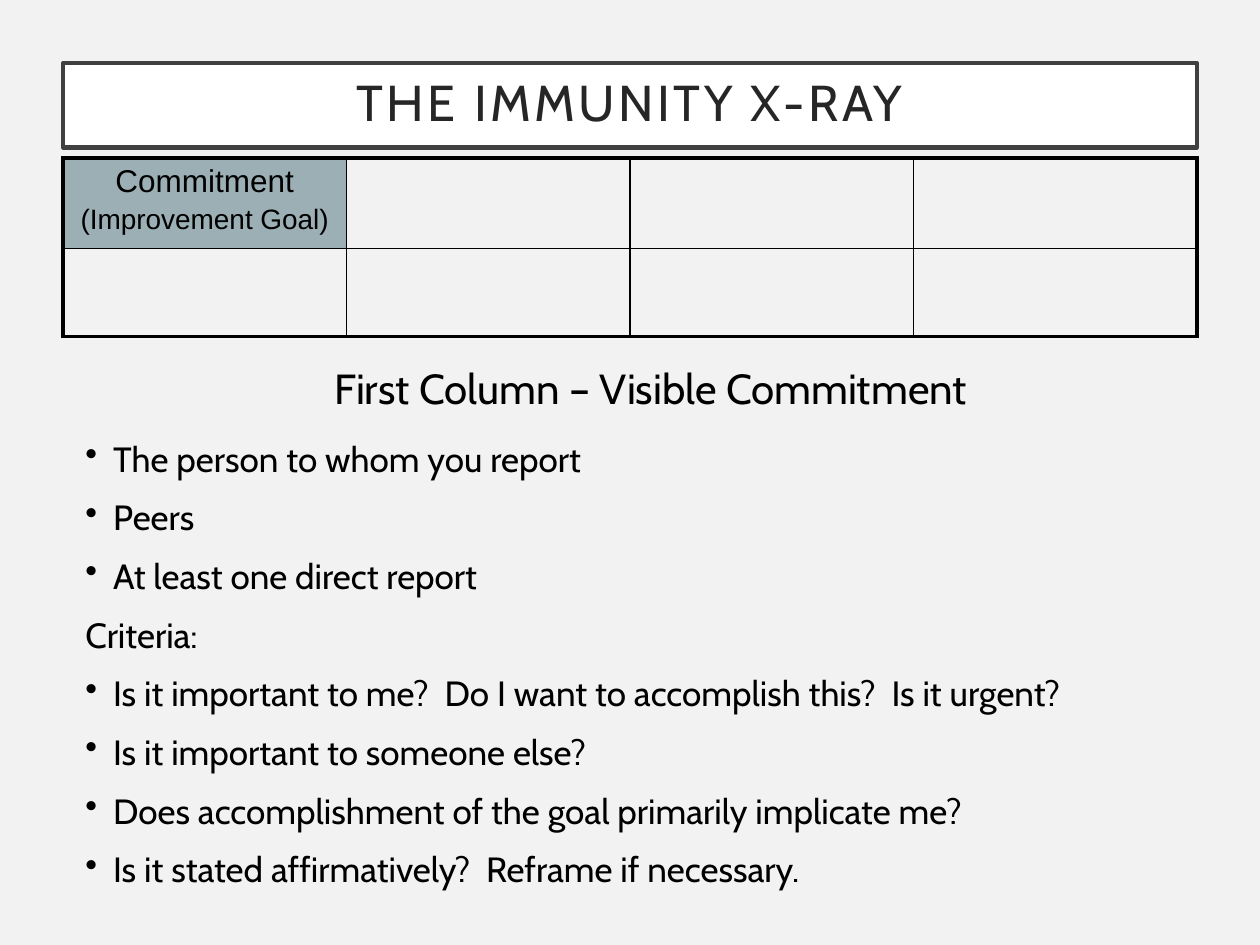
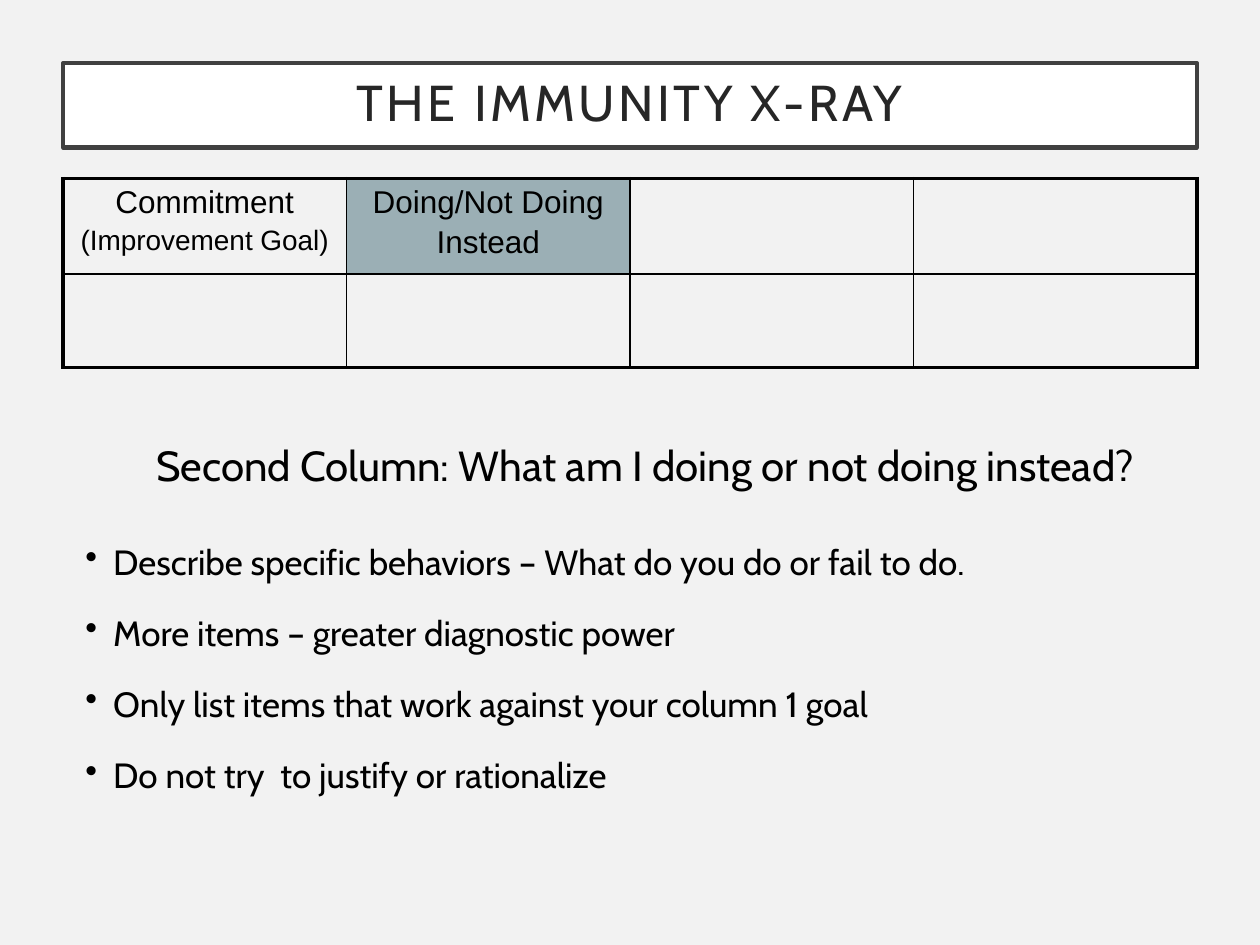
import dataclasses

import pptx
import pptx.dml.color
import pptx.enum.text
import pptx.oxml
import pptx.oxml.ns
import pptx.util


@dataclasses.dataclass(frozen=True)
class Theme:
    background: str = "F2F2F2"
    title_fill: str = "FFFFFF"
    title_line: str = "404040"
    title_text: str = "262626"
    text: str = "000000"
    highlight: str = "9BAFB5"
    font: str = "Cabin"
    table_font: str = "Arial"
    title_size: float = 28.8
    heading_size: float = 24
    body_size: float = 20
    label_size: float = 18
    sublabel_size: float = 16
    outer_border: float = 2.25
    inner_border: float = 1


theme = Theme()
rgb = pptx.dml.color.RGBColor.from_string
center = pptx.enum.text.PP_ALIGN.CENTER
namespace = pptx.oxml.ns.nsdecls("a")

presentation = pptx.Presentation()
presentation.slide_width = pptx.util.Inches(10)
presentation.slide_height = pptx.util.Inches(7.5)
width, height = presentation.slide_width, presentation.slide_height
margin = int(width * 0.05)
content_width = width - 2 * margin
bullet_indent = int(width * 0.022)


def format_text(paragraph, size, color, font):
    for run in paragraph.runs:
        run.font.size = pptx.util.Pt(size)
        run.font.name = font
        run.font.color.rgb = rgb(color)


def set_border(cell, side, points):
    cell._tc.get_or_add_tcPr().append(pptx.oxml.parse_xml(
        f'<a:{side} {namespace} w="{pptx.util.Pt(points)}"><a:solidFill>'
        f'<a:srgbClr val="{theme.text}"/></a:solidFill></a:{side}>'))


commitment = [("Commitment", theme.label_size), ("(Improvement Goal)", theme.sublabel_size)]
doing = [("Doing/Not Doing", theme.label_size), ("Instead", theme.label_size)]

# Vertical places are shares of the slide height; gaps are points. A "• " marks a bullet.
column_slides = [
    dict(
        labels=[commitment], table_top=0.167, row_heights=(0.096, 0.093),
        body_top=0.377, body_height=0.573, body_width=0.917,
        heading="First Column – Visible Commitment", heading_gap=14, item_gap=9.5,
        items=[
            "• The person to whom you report",
            "• Peers",
            "• At least one direct report",
            "Criteria:",
            "• Is it important to me?  Do I want to accomplish this?  Is it urgent?",
            "• Is it important to someone else?",
            "• Does accomplishment of the goal primarily implicate me?",
            "• Is it stated affirmatively?  Reframe if necessary.",
        ],
    ),
    dict(
        labels=[commitment, doing], table_top=0.189, row_heights=(0.101, 0.099),
        body_top=0.459, body_height=0.463, body_width=0.908,
        heading="Second Column: What am I doing or not doing instead?",
        heading_gap=28.5, item_gap=16.7,
        items=[
            "• Describe specific behaviors – What do you do or fail to do.",
            "• More items – greater diagnostic power",
            "• Only list items that work against your column 1 goal",
            "• Do not try  to justify or rationalize",
        ],
    ),
]

for content in column_slides:
    slide = presentation.slides.add_slide(presentation.slide_layouts[5])
    slide.background.fill.solid()
    slide.background.fill.fore_color.rgb = rgb(theme.background)

    # Title band
    title = slide.shapes.title
    title.left, title.top = margin, int(height * 0.067)
    title.width, title.height = content_width, int(height * 0.089)
    title.fill.solid()
    title.fill.fore_color.rgb = rgb(theme.title_fill)
    title.line.color.rgb = rgb(theme.title_line)
    title.line.width = pptx.util.Pt(2.5)
    frame = title.text_frame
    frame.text = "THE IMMUNITY X-RAY"
    frame.auto_size = pptx.enum.text.MSO_AUTO_SIZE.NONE
    frame.vertical_anchor = pptx.enum.text.MSO_ANCHOR.MIDDLE
    frame.margin_left = frame.margin_right = pptx.util.Inches(0.2)
    frame.margin_top = frame.margin_bottom = pptx.util.Inches(0.2)
    paragraph = frame.paragraphs[0]
    paragraph.alignment = center
    paragraph.line_spacing = 0.9
    format_text(paragraph, theme.title_size, theme.title_text, theme.font)
    paragraph.runs[0].font._element.set("spc", "200")

    # X-ray table, with the newest column highlighted
    row_heights = [int(height * share) for share in content["row_heights"]]
    table = slide.shapes.add_table(
        2, 4, margin, int(height * content["table_top"]), content_width, sum(row_heights)).table
    table.first_row = table.horz_banding = False
    for row, row_height in zip(table.rows, row_heights):
        row.height = row_height
    labels = content["labels"]
    for row in range(2):
        for column in range(4):
            cell = table.cell(row, column)
            outer_sides = {"lnL": column == 0, "lnR": column == 3, "lnT": row == 0, "lnB": row == 1}
            for side, is_outer in outer_sides.items():
                set_border(cell, side, theme.outer_border if is_outer else theme.inner_border)
            cell.fill.background()
            if row == 0 and column < len(labels):
                if column == len(labels) - 1:
                    cell.fill.solid()
                    cell.fill.fore_color.rgb = rgb(theme.highlight)
                cell.text_frame.text = "\n".join(text for text, size in labels[column])
                for paragraph, (text, size) in zip(cell.text_frame.paragraphs, labels[column]):
                    paragraph.alignment = center
                    format_text(paragraph, size, theme.text, theme.table_font)
                cell.text_frame.paragraphs[1].space_before = pptx.util.Pt(3)

    # Heading and its points
    body = slide.shapes.add_textbox(
        int(width * 0.058), int(height * content["body_top"]),
        int(width * content["body_width"]), int(height * content["body_height"]))
    frame = body.text_frame
    frame.word_wrap = True
    paragraph = frame.paragraphs[0]
    paragraph.text = content["heading"]
    paragraph.alignment = center
    format_text(paragraph, theme.heading_size, theme.text, theme.font)
    for index, item in enumerate(content["items"]):
        paragraph = frame.add_paragraph()
        paragraph.text = item.removeprefix("• ")
        gap = content["item_gap"] if index else content["heading_gap"]
        paragraph.space_before = pptx.util.Pt(gap)
        format_text(paragraph, theme.body_size, theme.text, theme.font)
        if item.startswith("• "):
            properties = paragraph._p.get_or_add_pPr()
            properties.set("marL", str(bullet_indent))
            properties.set("indent", str(-bullet_indent))
            properties.append(pptx.oxml.parse_xml(f'<a:buChar {namespace} char="•"/>'))

presentation.save("out.pptx")
